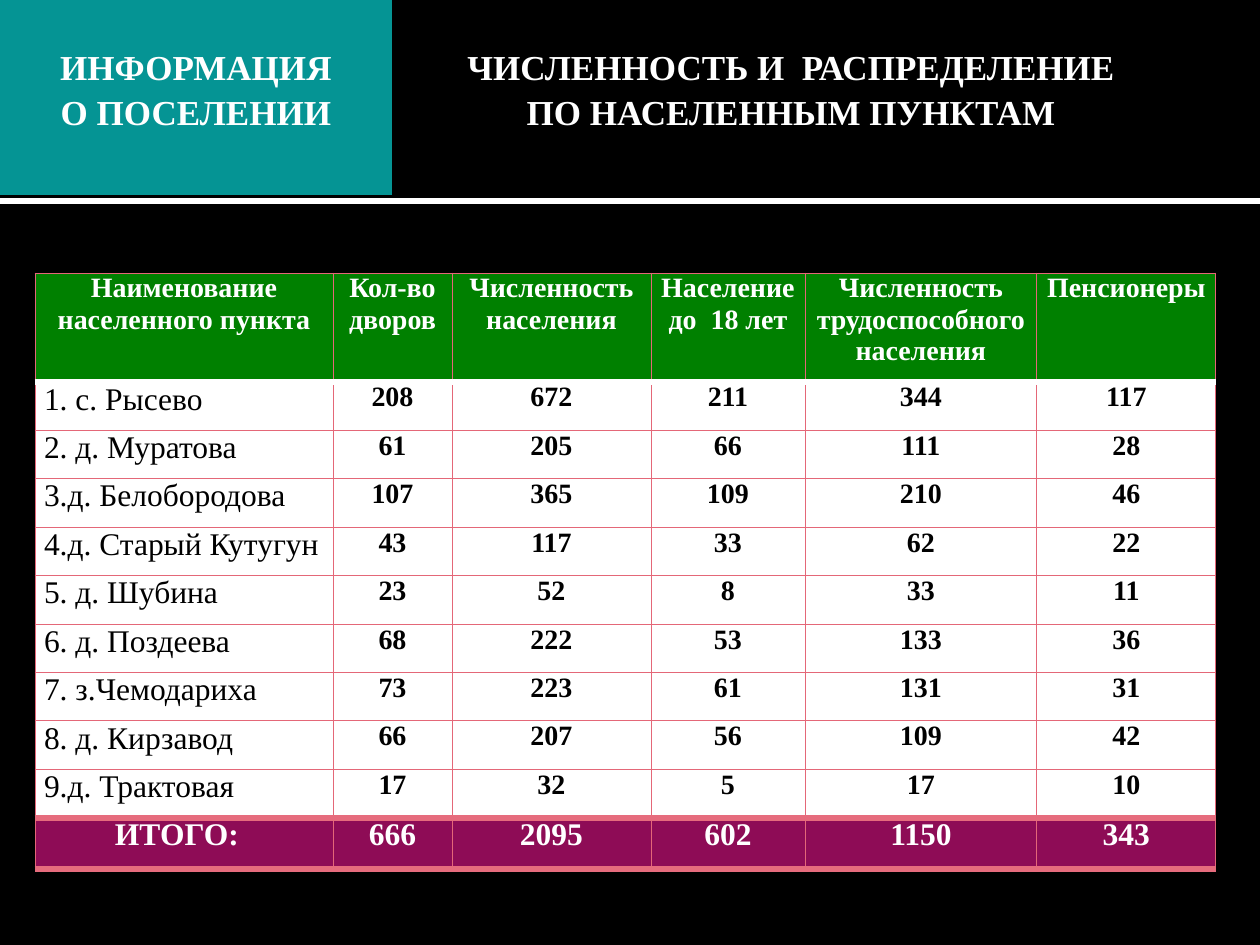
"""Build the slide on settlement population by locality."""
from lxml import etree
from pptx import Presentation
from pptx.dml.color import RGBColor
from pptx.enum.shapes import MSO_SHAPE
from pptx.enum.text import MSO_ANCHOR, PP_ALIGN
from pptx.oxml.ns import qn
from pptx.util import Emu, Pt

RECT = MSO_SHAPE.RECTANGLE
TOP = MSO_ANCHOR.TOP
CENTER, JUSTIFY = PP_ALIGN.CENTER, PP_ALIGN.JUSTIFY

BLACK = RGBColor(0x00, 0x00, 0x00)
WHITE = RGBColor(0xFF, 0xFF, 0xFF)
TEAL = RGBColor(0x05, 0x94, 0x94)
GREEN = RGBColor(0x00, 0x80, 0x00)
PLUM = RGBColor(0x8E, 0x0C, 0x56)
ROSE = RGBColor(0xE4, 0x67, 0x78)
CORAL = RGBColor(0xE6, 0x6C, 0x7D)

FONT = "Times New Roman"
PX = 914400 / 126
INSET = 9
TOTAL_INDENT = 80
TITLE_SPACING = 1.06
THIN, WHITE_RULE, TOTAL_RULE = (ROSE, 0.5), (WHITE, 3.78), (CORAL, 3.78)

COLUMNS = [298, 119, 199, 154, 232, 179]
HEADER_H, BODY_H, TOTAL_H = 109, 436, 51
HEADER = [
    ["Наименование", "населенного пункта"],
    ["Кол-во дворов"],
    ["Численность населения"],
    ["Население до  18 лет"],
    ["Численность трудоспособного населения"],
    ["Пенсионеры"],
]
LOCALITIES = [
    ("1. с. Рысево", 208, 672, 211, 344, 117),
    ("2. д. Муратова", 61, 205, 66, 111, 28),
    ("3.д. Белобородова", 107, 365, 109, 210, 46),
    ("4.д. Старый Кутугун", 43, 117, 33, 62, 22),
    ("5. д. Шубина", 23, 52, 8, 33, 11),
    ("6. д. Поздеева", 68, 222, 53, 133, 36),
    ("7. з.Чемодариха", 73, 223, 61, 131, 31),
    ("8. д. Кирзавод", 66, 207, 56, 109, 42),
    ("9.д. Трактовая", 17, 32, 5, 17, 10),
]
TOTAL = ("ИТОГО:", 666, 2095, 602, 1150, 343)


def px(n):
    """Turn pixels into EMU."""
    return Emu(round(n * PX))


def write(tf, lines, size, color, bold=True, align=CENTER, spacing=None):
    """Write one paragraph per line."""
    for i, line in enumerate(lines):
        p = tf.add_paragraph() if i else tf.paragraphs[0]
        p.alignment = align
        if spacing:
            p.line_spacing = spacing
        r = p.add_run()
        r.text = line
        r.font.name, r.font.size, r.font.bold = FONT, Pt(size), bold
        r.font.color.rgb = color


def add_rect(s, x, y, w, h, color):
    """Add a plain filled rectangle."""
    sp = s.shapes.add_shape(RECT, px(x), px(y), px(w), px(h))
    sp.shadow.inherit = False
    sp.fill.solid()
    sp.fill.fore_color.rgb = color
    sp.line.fill.background()
    return sp


def add_title(sp, lines, top, side):
    """Set a two-line title in a shape or text box."""
    tf = sp.text_frame
    tf.word_wrap = False
    tf.vertical_anchor = TOP
    tf.margin_top, tf.margin_bottom = px(top), 0
    tf.margin_left = tf.margin_right = px(side)
    write(tf, lines, 20, WHITE, spacing=TITLE_SPACING)


def set_borders(cell, top, bottom):
    """Draw thin side borders and the given top and bottom ones."""
    tcPr = cell._tc.get_or_add_tcPr()
    edges = (("a:lnL", THIN), ("a:lnR", THIN), ("a:lnT", top), ("a:lnB", bottom))
    for i, (tag, (color, width)) in enumerate(edges):
        ln = etree.Element(qn(tag), w=str(Pt(width)))
        fill = etree.SubElement(ln, qn("a:solidFill"))
        etree.SubElement(fill, qn("a:srgbClr"), val=str(color))
        tcPr.insert(i, ln)


def fill_row(row, values, sizes, color, fill, top=THIN, bottom=THIN,
             name_bold=True, name_align=JUSTIFY, indent=INSET):
    """Fill one table row, whose first cell holds the name."""
    for i, (cell, lines) in enumerate(zip(row.cells, values)):
        cell.fill.solid()
        cell.fill.fore_color.rgb = fill
        cell.margin_left = px(INSET if i else indent)
        cell.margin_right = px(INSET)
        cell.margin_top = cell.margin_bottom = 0
        write(cell.text_frame, lines, sizes[min(i, 1)], color,
              True if i else name_bold, CENTER if i else name_align)
        set_borders(cell, top, bottom)


def as_lines(record):
    """Turn a record into one-line cell texts."""
    return [[str(value)] for value in record]


def add_population_table(s):
    """Add the table of localities with header and total."""
    count = len(LOCALITIES)
    table = s.shapes.add_table(count + 2, len(COLUMNS), px(35), px(273), px(sum(COLUMNS)),
                               px(HEADER_H + BODY_H + TOTAL_H)).table
    table.first_row = table.horz_banding = False
    for column, width in zip(table.columns, COLUMNS):
        column.width = px(width)
    rows = list(table.rows)
    for row in rows:
        row.height = px(BODY_H / count)
    rows[0].height, rows[-1].height = px(HEADER_H), px(TOTAL_H)

    fill_row(rows[0], HEADER, (16, 16), WHITE, GREEN, bottom=WHITE_RULE, name_align=CENTER)
    for i, record in enumerate(LOCALITIES):
        fill_row(rows[i + 1], as_lines(record), (18, 16), BLACK, WHITE,
                 WHITE_RULE if i == 0 else THIN,
                 TOTAL_RULE if i == count - 1 else THIN, name_bold=False)
    fill_row(rows[-1], as_lines(TOTAL), (18, 18), WHITE, PLUM,
             TOTAL_RULE, TOTAL_RULE, indent=TOTAL_INDENT)


def main():
    """Build and save the slide."""
    prs = Presentation()
    prs.slide_width, prs.slide_height = px(1260), px(945)
    s = prs.slides.add_slide(prs.slide_layouts[6])
    s.background.fill.solid()
    s.background.fill.fore_color.rgb = BLACK

    add_rect(s, 0, 198, 1260, 6, WHITE)
    add_rect(s, 0, 0, 1260, 198, BLACK)
    section = add_rect(s, 0, 0, 392, 195, TEAL)
    add_title(section, ["ИНФОРМАЦИЯ", "О ПОСЕЛЕНИИ"], 43, 0)
    heading = s.shapes.add_textbox(px(452), px(37), px(678), px(97))
    add_title(heading, ["ЧИСЛЕННОСТЬ И  РАСПРЕДЕЛЕНИЕ", "ПО НАСЕЛЕННЫМ ПУНКТАМ"], 6, 13)
    add_population_table(s)
    prs.save("out.pptx")


if __name__ == "__main__":
    main()
